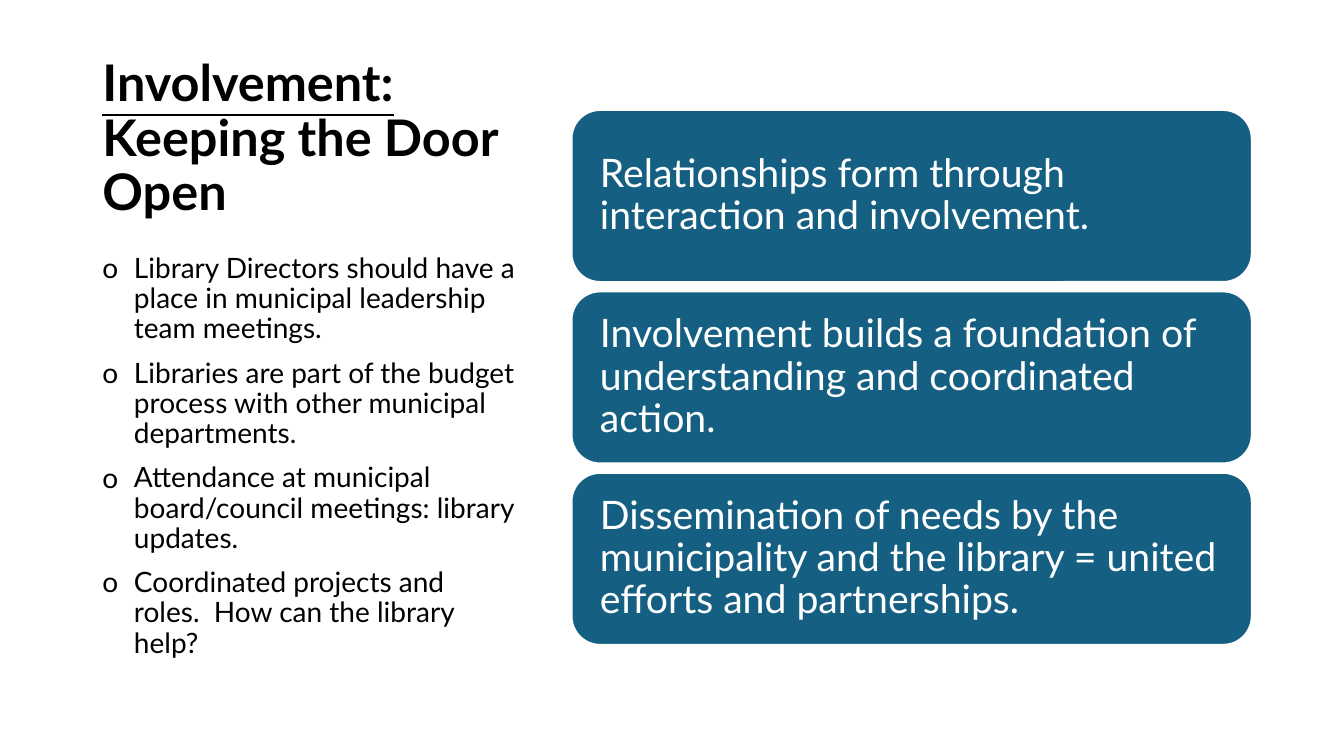
from lxml.etree import SubElement
from pptx import Presentation
from pptx.dml.color import RGBColor
from pptx.enum.shapes import MSO_SHAPE as Shape
from pptx.enum.text import MSO_ANCHOR as Anchor, MSO_AUTO_SIZE as AutoSize, PP_ALIGN as Align
from pptx.oxml.ns import qn
from pptx.util import Pt

BULLETS = [
    "Library Directors should have a place in municipal leadership team meetings.",
    "Libraries are part of the budget process with other municipal departments.",
    "Attendance at municipal board/council meetings: library updates.",
    "Coordinated projects and roles.  How can the library help?",
]
MESSAGES = [
    "Relationships form through interaction and involvement.",
    "Involvement builds a foundation of understanding and coordinated action.",
    "Dissemination of needs by the municipality and the library = united efforts and partnerships.",
]


def color(value):
    return RGBColor.from_string(value)


class SlideBuilder:
    FONT = "Lato"
    INK, PAPER, PANEL = "000000", "FFFFFF", "156082"
    LINE_SPACING = 0.9
    BULLET_INDENT = 22.5

    def __init__(self, slide):
        self.slide = slide

    def place(self, holder, left, top, width, height, anchor):
        holder.left, holder.top = Pt(left), Pt(top)
        holder.width, holder.height = Pt(width), Pt(height)
        frame = holder.text_frame
        frame.word_wrap = True
        frame.auto_size = AutoSize.NONE
        frame.vertical_anchor = anchor
        return frame

    def format_paragraph(self, paragraph, before=0):
        paragraph.alignment = Align.LEFT
        paragraph.line_spacing = self.LINE_SPACING
        paragraph.space_before = Pt(before)
        paragraph.space_after = Pt(0)

    def run(self, paragraph, text, size, ink, bold=False, underline=False):
        run = paragraph.add_run()
        run.text = text
        font = run.font
        font.name, font.size = self.FONT, Pt(size)
        font.bold, font.underline = bold, underline
        font.color.rgb = color(ink)

    def title(self, lead, rest, *box):
        frame = self.place(self.slide.shapes.title, *box, Anchor.BOTTOM)
        heading = frame.paragraphs[0]
        self.format_paragraph(heading)
        self.run(heading, lead, 36, self.INK, bold=True, underline=True)
        heading.add_line_break()
        self.run(heading, rest, 36, self.INK, bold=True)

    def bullet_list(self, items, *box):
        frame = self.place(self.slide.placeholders[1], *box, Anchor.TOP)
        for index, item in enumerate(items):
            entry = frame.add_paragraph() if index else frame.paragraphs[0]
            self.format_paragraph(entry, before=10 if index else 0)
            props = entry._p.get_or_add_pPr()
            props.set("marL", str(Pt(self.BULLET_INDENT)))
            props.set("indent", str(-Pt(self.BULLET_INDENT)))
            SubElement(props, qn("a:buFont"), typeface=self.FONT)
            SubElement(props, qn("a:buChar"), char="o")
            self.run(entry, item, 20, self.INK)

    def panel(self, message, left, top, width, height):
        panel = self.slide.shapes.add_shape(
            Shape.ROUNDED_RECTANGLE, Pt(left), Pt(top), Pt(width), Pt(height))
        panel.shadow.inherit = False
        panel.fill.solid()
        panel.fill.fore_color.rgb = color(self.PANEL)
        panel.line.color.rgb = color(self.PAPER)
        panel.line.width = Pt(1.5)
        frame = panel.text_frame
        frame.word_wrap = True
        frame.vertical_anchor = Anchor.MIDDLE
        frame.margin_left = frame.margin_right = Pt(14.4)
        frame.margin_top = frame.margin_bottom = Pt(14.4)
        self.format_paragraph(frame.paragraphs[0])
        self.run(frame.paragraphs[0], message, 28, self.PAPER)


def main():
    deck = Presentation()
    deck.slide_width, deck.slide_height = Pt(960), Pt(540)
    builder = SlideBuilder(deck.slides.add_slide(deck.slide_layouts[1]))

    # Left column: heading and bullets
    builder.title("Involvement:", "Keeping the Door Open", 66, 36, 309.6, 126)
    builder.bullet_list(BULLETS, 66, 178, 309.6, 284.4)

    # Right column: evenly spaced message panels
    panel_top, panel_height, gap = 78.5, 123, 6.6
    for row, message in enumerate(MESSAGES):
        builder.panel(message, 408.2, panel_top + row * (panel_height + gap), 486, panel_height)

    deck.save("out.pptx")


if __name__ == "__main__":
    main()
